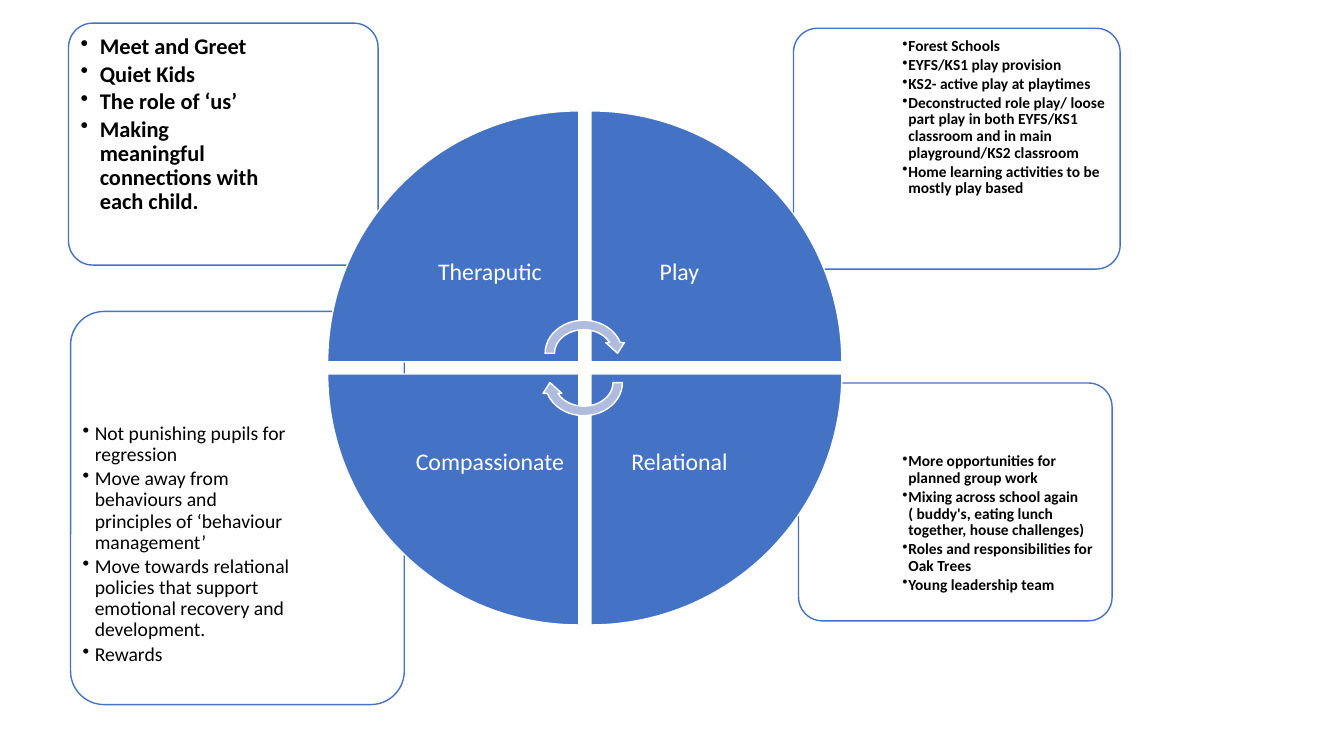
from lxml.etree import SubElement
from pptx import Presentation
from pptx.dml.color import RGBColor
from pptx.enum.shapes import MSO_SHAPE as Geo
from pptx.enum.text import MSO_ANCHOR as Anchor, PP_ALIGN as Align
from pptx.oxml.ns import qn
from pptx.util import Pt

PX = 9144  # 100 px to the inch
BLUE = RGBColor(0x44, 0x72, 0xC4)
PALE = RGBColor(0xB0, 0xBC, 0xDE)
WHITE = RGBColor(0xFF, 0xFF, 0xFF)
BLACK = RGBColor(0, 0, 0)

# card area, list area, list format, items
CARDS = [
    ((792, 380, 311, 236), (890, 445, 208, 167),
     dict(size=11, bold=True, inset=5, hang=6),
     ["More opportunities for planned group work",
      "Mixing across school again ( buddy's, eating lunch together, house challenges)",
      "Roles and responsibilities for Oak Trees",
      "Young leadership team"]),
    ((70, 309, 331, 390), (76, 414, 218, 279),
     dict(size=14, bold=False, inset=6, hang=12),
     ["Not punishing pupils for regression",
      "Move away from behaviours and principles of ‘behaviour management’",
      "Move towards relational policies that support emotional recovery and development.",
      "Rewards"]),
    ((787, 28, 324, 239), (890, 33, 216, 169),
     dict(size=11, bold=True, inset=5, hang=6),
     ["Forest Schools",
      "EYFS/KS1 play provision",
      "KS2- active play at playtimes",
      "Deconstructed role play/ loose part play in both EYFS/KS1 classroom "
      "and in main playground/KS2 classroom",
      "Home learning activities to be mostly play based"]),
    ((68, 23, 307, 240), (73, 28, 204, 169),
     dict(size=16, bold=True, inset=7, hang=19),
     ["Meet and Greet",
      "Quiet Kids",
      "The role of ‘us’",
      "Making meaningful connections with each child."]),
]

# clockwise from top left: name, column, row
PARTS = [("Theraputic", 0, 0), ("Play", 1, 0),
         ("Relational", 1, 1), ("Compassionate", 0, 1)]
WEDGE, LABEL = 249, 176
LEFT, TOP, STEP = 325, 110, 261


def assign(item, values):
    for name, value in values.items():
        setattr(item, name, value)


class Board:
    face = "Calibri"

    def __init__(self, deck):
        self.shapes = deck.slides.add_slide(deck.slide_layouts[6]).shapes

    def shape(self, geo, area, fill, line, turn=0):
        item = self.shapes.add_shape(geo, *(n * PX for n in area))
        item.shadow.inherit = False
        item.rotation = turn
        item.fill.solid()
        item.fill.fore_color.rgb = fill
        item.line.color.rgb = line
        item.line.width = Pt(1)
        return item

    def card(self, area):
        item = self.shape(Geo.ROUNDED_RECTANGLE, area, WHITE, BLUE)
        item.adjustments[0] = 0.1
        tint = item.fill._xPr.find(qn("a:solidFill"))[0]
        SubElement(tint, qn("a:alpha"), val="90000")

    def text(self, area, lines, size, color, inset, gap, bold=False,
             hang=0, anchor=Anchor.TOP, align=Align.LEFT):
        """Add a text box; a hang above 0 gives bullets with that indent."""
        frame = self.shapes.add_textbox(*(n * PX for n in area)).text_frame
        assign(frame, dict(word_wrap=True, vertical_anchor=anchor))
        assign(frame, {f"margin_{side}": inset * PX
                       for side in ("left", "top", "right", "bottom")})
        for i, line in enumerate(lines):
            para = frame.add_paragraph() if i else frame.paragraphs[0]
            if hang:
                self.bullet(para, hang)
            assign(para, dict(alignment=align, line_spacing=0.9,
                              space_after=Pt(round(size * gap, 2))))
            run = para.add_run()
            run.text = line
            assign(run.font, dict(name=self.face, size=Pt(size), bold=bold))
            run.font.color.rgb = color

    def bullet(self, para, hang):
        para.level = 1
        props = para._p.get_or_add_pPr()
        props.set("marL", str(hang * PX))
        props.set("indent", str(-hang * PX))
        SubElement(props, qn("a:buChar"), char="•")

    def wedge(self, name, col, row, turn):
        x, y = LEFT + col * STEP, TOP + row * STEP
        self.shape(Geo.PIE_WEDGE, (x, y, WEDGE, WEDGE), BLUE, WHITE, turn)
        inner = WEDGE - LABEL
        spot = (x + inner * (1 - col), y + inner * (1 - row), LABEL, LABEL)
        self.text(spot, [name], 17, WHITE, 13, 0.35,
                  anchor=Anchor.MIDDLE, align=Align.CENTER)

    def arrow(self, y, turn):
        self.shape(Geo.CIRCULAR_ARROW, (536, y, 86, 75), PALE, WHITE, turn)


def main():
    deck = Presentation()
    assign(deck, dict(slide_width=1333 * PX, slide_height=750 * PX))
    board = Board(deck)
    for area, spot, form, items in CARDS:
        board.card(area)
        board.text(spot, items, color=BLACK, gap=0.15, **form)
    for i, (name, col, row) in enumerate(PARTS):
        board.wedge(name, col, row, 90 * i)
    board.arrow(313, 0)
    board.arrow(342, 180)
    deck.save("out.pptx")


if __name__ == "__main__":
    main()
